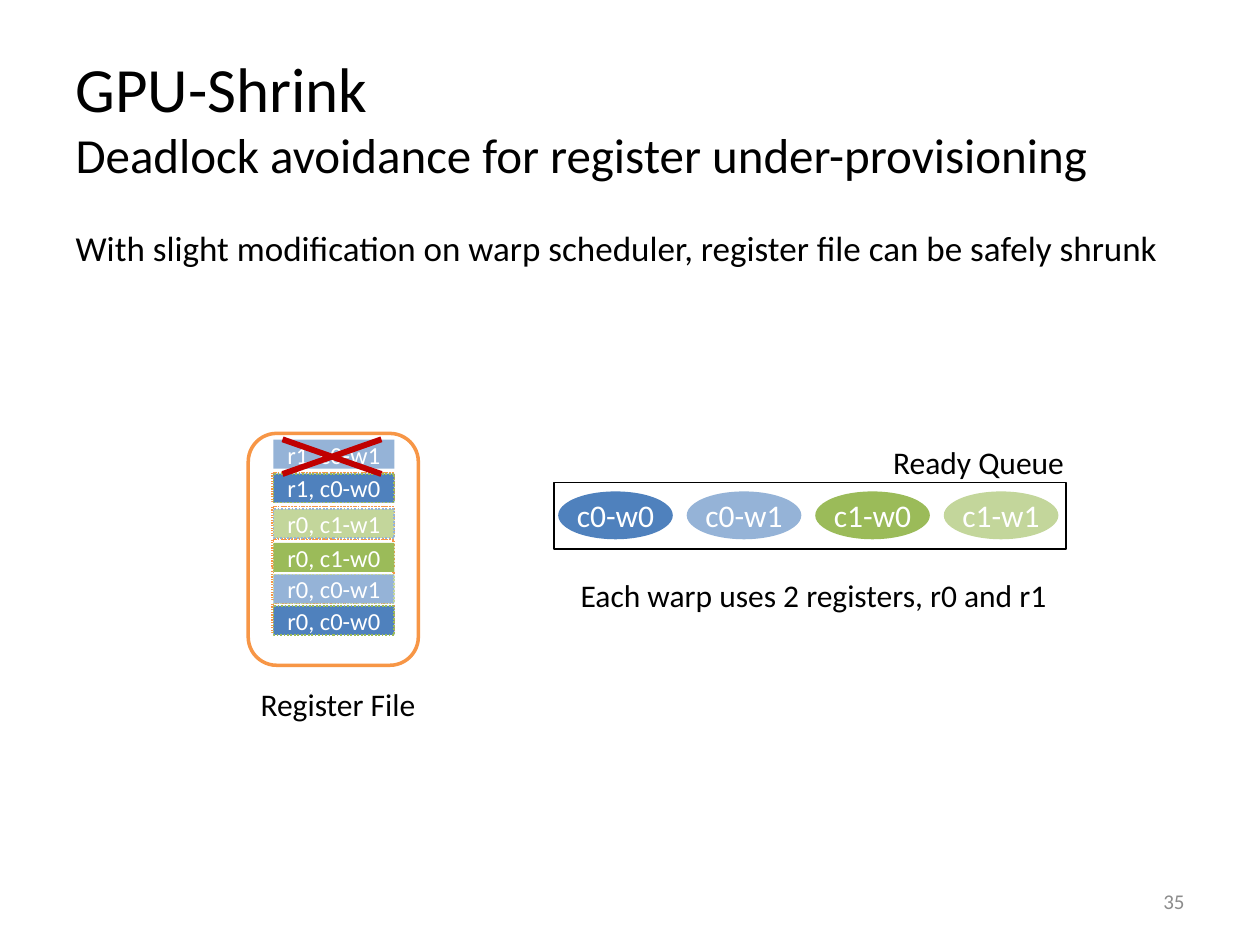
"""Builds the GPU-Shrink slide on deadlock avoidance for a smaller register file."""
from dataclasses import dataclass

from pptx import Presentation
from pptx import util as u
from pptx.dml.color import RGBColor
from pptx.enum import dml, shapes, text
from pptx.oxml.xmlchemy import OxmlElement


@dataclass(frozen=True)
class Theme:
    font: str = "Calibri"
    black: str = "000000"
    white: str = "FFFFFF"
    gray: str = "8C8C8C"
    orange: str = "F79646"
    red: str = "C00000"
    blue: str = "4F81BD"
    pale_blue: str = "95B3D7"
    green: str = "9BBB59"
    pale_green: str = "C3D69B"
    title: int = 36
    subtitle: int = 28
    body: int = 20
    label: int = 18
    register: int = 14
    number: int = 12


theme = Theme()
kinds = shapes.MSO_SHAPE
align = text.PP_ALIGN


def add_span(para, words, size, color=theme.black):
    span = para.add_run()
    span.text = words
    span.font.name = theme.font
    span.font.size = u.Pt(size)
    span.font.color.rgb = RGBColor.from_string(color)


def add_box(kind, place, fill=None, line=None, width=1, dotted=False, words="", size=theme.label):
    box = page.shapes.add_shape(kind, *map(u.Inches, place))
    box.shadow.inherit = False
    if fill:
        box.fill.solid()
        box.fill.fore_color.rgb = RGBColor.from_string(fill)
    else:
        box.fill.background()
    if line:
        box.line.color.rgb = RGBColor.from_string(line)
        box.line.width = u.Pt(width)
        if dotted:
            box.line.dash_style = dml.MSO_LINE.ROUND_DOT
    else:
        box.line.fill.background()
    if words:
        frame = box.text_frame
        frame.margin_left = frame.margin_right = frame.margin_top = frame.margin_bottom = 0
        frame.vertical_anchor = text.MSO_ANCHOR.MIDDLE
        frame.paragraphs[0].alignment = align.CENTER
        add_span(frame.paragraphs[0], words, size, theme.white)
    return box


deck = Presentation()
deck.slide_width, deck.slide_height = u.Inches(10), u.Inches(7.5)
page = deck.slides.add_slide(deck.slide_layouts[1])

title, body = page.shapes.title, page.placeholders[1]
for holder, place in ((title, (0.5, 0.3, 9, 1.25)), (body, (0.5, 1.75, 9.15, 4.95))):
    holder.left, holder.top, holder.width, holder.height = map(u.Inches, place)
    holder.text_frame.auto_size = text.MSO_AUTO_SIZE.NONE
    holder.text_frame.paragraphs[0].alignment = align.LEFT

para = title.text_frame.paragraphs[0]
add_span(para, "GPU-Shrink", theme.title)
para.add_line_break()
add_span(para, "Deadlock avoidance for register under-provisioning", theme.subtitle)

para = body.text_frame.paragraphs[0]
props = para._p.get_or_add_pPr()
props.set("marL", "0")
props.set("indent", "0")
props.append(OxmlElement("a:buNone"))
add_span(para, "With slight modification on warp scheduler, register file can be safely shrunk", theme.body)

add_box(kinds.ROUNDED_RECTANGLE, (1.97, 3.44, 1.35, 1.84), line=theme.orange, width=2)
for left, width in ((2.17, 1), (2.16, 0.75)):
    for top in (3.75, 4.02, 4.28, 4.53, 4.79):
        add_box(kinds.RECTANGLE, (left, top, 0.96, 0.23), line=theme.orange, width=width, dotted=True)

registers = [
    ("r1, c0-w1", 3.49, theme.pale_blue, None),
    ("r1, c0-w0", 3.76, theme.blue, theme.green),
    ("r0, c1-w1", 4.04, theme.pale_green, theme.pale_blue),
    ("r0, c1-w0", 4.31, theme.green, None),
    ("r0, c0-w1", 4.56, theme.pale_blue, theme.pale_green),
    ("r0, c0-w0", 4.81, theme.blue, theme.green),
]
for name, top, fill, line in registers:
    add_box(kinds.RECTANGLE, (2.17, top, 0.96, 0.23), fill, line, dotted=True,
            words=name, size=theme.register)

warps = [("c0-w0", theme.blue), ("c0-w1", theme.pale_blue),
         ("c1-w0", theme.green), ("c1-w1", theme.pale_green)]
for index, (name, fill) in enumerate(warps):
    add_box(kinds.OVAL, (4.43 + 1.02 * index, 3.9, 0.91, 0.38), fill, words=name)
add_box(kinds.RECTANGLE, (4.4, 3.83, 4.06, 0.53), line=theme.black)

labels = [
    ("Register File", (1.97, 5.39, 1.46, 0.4), theme.label, theme.black, align.LEFT),
    ("Ready Queue", (6.99, 3.47, 1.59, 0.4), theme.label, theme.black, align.LEFT),
    ("Each warp uses 2 registers, r0 and r1", (4.51, 4.52, 3.97, 0.4), theme.label, theme.black, align.LEFT),
    ("35", (7.17, 6.95, 2.33, 0.4), theme.number, theme.gray, align.RIGHT),
]
for words, place, size, color, side in labels:
    box = page.shapes.add_textbox(*map(u.Inches, place))
    box.text_frame.word_wrap = True
    box.text_frame.vertical_anchor = text.MSO_ANCHOR.MIDDLE
    para = box.text_frame.paragraphs[0]
    para.alignment = side
    add_span(para, words, size, color)

cross = add_box(kinds.MATH_MULTIPLY, (1.88, 3.36, 1.51, 0.53), theme.red)
cross.adjustments[0] = 0.088

deck.save("out.pptx")
